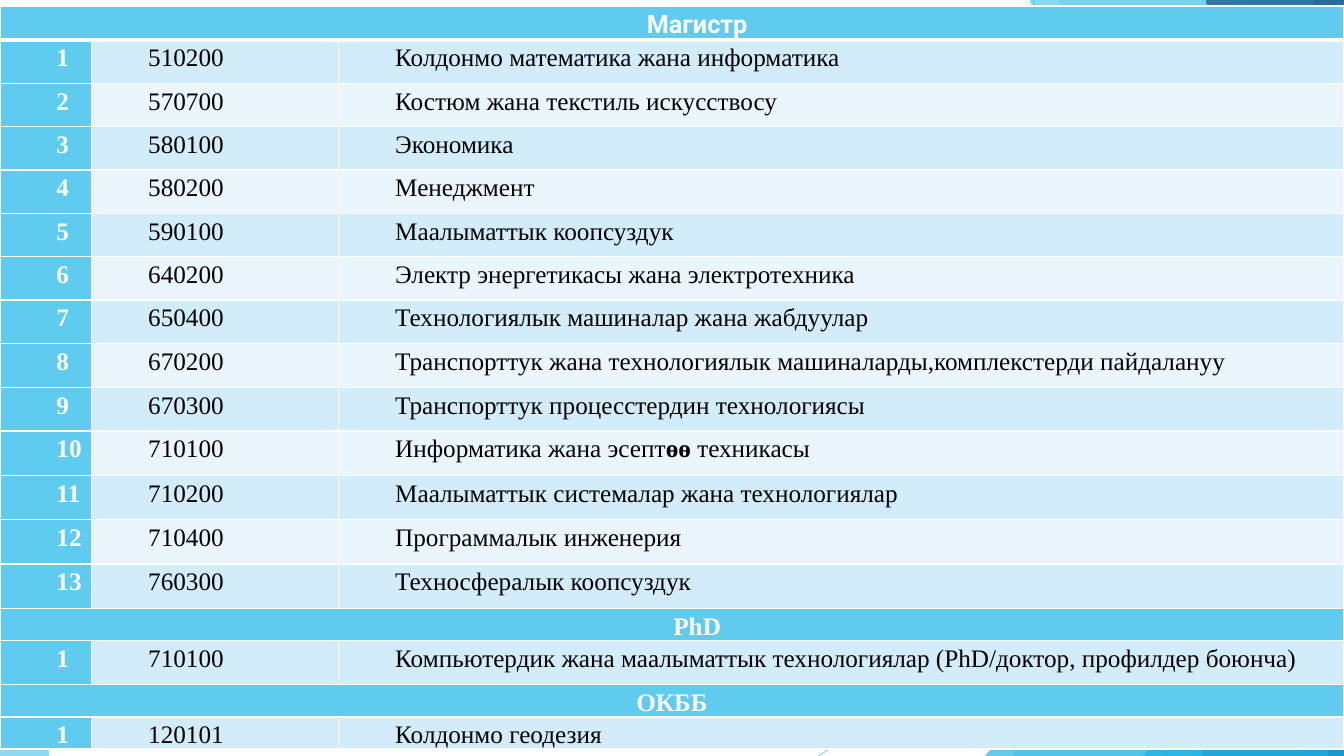
from lxml.etree import SubElement
from pptx import Presentation
from pptx.dml.color import RGBColor
from pptx.enum.shapes import MSO_CONNECTOR as Connector, MSO_SHAPE as Shape
from pptx.enum.text import PP_ALIGN as Align
from pptx.oxml.ns import qn
from pptx.util import Inches, Pt

WHITE = RGBColor(0xFF, 0xFF, 0xFF)
BLACK = RGBColor(0, 0, 0)
SKY = RGBColor(0x5F, 0xCB, 0xEF)
CYAN = RGBColor(0x17, 0xB0, 0xE4)
BLUE = RGBColor(0x2E, 0x83, 0xC3)
NAVY = RGBColor(0x22, 0x62, 0x92)
BANDS = (RGBColor(0xD2, 0xEC, 0xF9), RGBColor(0xEA, 0xF6, 0xFC))

SERIF = "Times New Roman"
TOP, BOTTOM, RIGHT = -0.01, 7.5, 13.33
COLUMNS = (0.91, 2.45, 9.97)
ROW_HEIGHTS = ([0.24] + [0.43] * 7 + [0.44, 0.43] + [0.44] * 4
               + [0.22, 0.44, 0.2, 0.22])

# Level, heading font, heading indent, programmes; ** surrounds bold text
LEVELS = [
    ("Магистр", "Roboto", 0.5, [
        ("510200", "Колдонмо математика жана информатика"),
        ("570700", "Костюм жана текстиль искусствосу"),
        ("580100", "Экономика"),
        ("580200", "Менеджмент"),
        ("590100", "Маалыматтык коопсуздук"),
        ("640200", "Электр энергетикасы жана электротехника"),
        ("650400", "Технологиялык машиналар жана жабдуулар"),
        ("670200", "Транспорттук жана технологиялык машиналарды,"
                   "комплекстерди пайдалануу"),
        ("670300", "Транспорттук процесстердин технологиясы"),
        ("710100", "Информатика жана эсепт**өө** техникасы"),
        ("710200", "Маалыматтык системалар жана технологиялар"),
        ("710400", "Программалык инженерия"),
        ("760300", "Техносфералык коопсуздук"),
    ]),
    ("PhD", SERIF, 0.5, [
        ("710100", "Компьютердик жана маалыматтык технологиялар "
                   "(PhD/доктор, профилдер боюнча)"),
    ]),
    ("ОКББ", SERIF, 0, [("120101", "Колдонмо геодезия")]),
]


def set_alpha(fill, percent):
    color = fill.find(".//" + qn("a:srgbClr"))
    SubElement(color, qn("a:alpha"), val=str(percent * 1000))


def paint(s, color, alpha):
    """Give a shape a translucent fill, without line or shadow."""
    s.shadow.inherit = False
    s.line.fill.background()
    s.fill.solid()
    s.fill.fore_color.rgb = color
    set_alpha(s.element.spPr.find(qn("a:solidFill")), alpha)


def add_ray(shapes, x1, y1, x2, y2):
    s = shapes.add_connector(Connector.STRAIGHT, Inches(x1), Inches(y1),
                             Inches(x2), Inches(y2))
    s.line.color.rgb = SKY
    s.line.width = Pt(0.75)
    set_alpha(s.line._ln, 70)
    SubElement(s.element.spPr, qn("a:effectLst"))


def add_facet(shapes, top_x, bottom_x, color, alpha):
    """Fill the area from a slanted edge to the right side of the slide."""
    builder = shapes.build_freeform(Inches(top_x), Inches(TOP), scale=1.0)
    corners = [(RIGHT, TOP), (RIGHT, BOTTOM), (bottom_x, BOTTOM)]
    builder.add_line_segments([(Inches(x), Inches(y)) for x, y in corners])
    paint(builder.convert_to_shape(), color, alpha)


def add_triangle(shapes, left, top, width, apex, color, alpha):
    s = shapes.add_shape(Shape.ISOSCELES_TRIANGLE, Inches(left), Inches(top),
                         Inches(width), Inches(BOTTOM - top))
    s.adjustments[0] = apex
    paint(s, color, alpha)


def add_background(shapes):
    add_ray(shapes, 10.25, 0, 11.58, BOTTOM)
    add_ray(shapes, RIGHT, 4.03, 8.12, BOTTOM)
    add_facet(shapes, 12.28, 10.04, SKY, 36)
    add_facet(shapes, 10.5, 11.83, SKY, 20)
    add_triangle(shapes, 9.77, 3.33, 3.56, 1, CYAN, 66)
    add_facet(shapes, 10.21, 12.91, CYAN, 50)
    add_facet(shapes, 13.03, 11.92, BLUE, 70)
    add_facet(shapes, 11.96, 13.18, NAVY, 80)
    add_triangle(shapes, 11.34, 3.93, 1.99, 1, CYAN, 66)
    add_triangle(shapes, 0, 4.39, 0.49, 0, SKY, 70)


def write(tf, text, color=BLACK, bold=False, font=SERIF, align=Align.LEFT,
          indent=0.5):
    p = tf.paragraphs[0]
    p.alignment = align
    p.line_spacing = 1.15
    p._p.get_or_add_pPr().set("marL", str(Inches(indent)))
    for i, part in enumerate(text.split("**")):
        r = p.add_run()
        r.text = part
        r.font.name = font
        r.font.size = Pt(18)
        r.font.bold = bold or i % 2 == 1
        r.font.color.rgb = color


def style_cell(cell, fill, bottom=1):
    cell.margin_left = cell.margin_right = Inches(0.06)
    cell.margin_top = cell.margin_bottom = 0
    tc_pr = cell._tc.get_or_add_tcPr()
    for side, width in (("L", 1), ("R", 1), ("T", 1), ("B", bottom)):
        ln = SubElement(tc_pr, qn("a:ln" + side), w=str(Pt(width)))
        SubElement(SubElement(ln, qn("a:solidFill")), qn("a:srgbClr"),
                   val=str(WHITE))
    cell.fill.solid()
    cell.fill.fore_color.rgb = fill


def fill_heading(table, row, title, font, indent):
    for cell in table.rows[row].cells:
        style_cell(cell, SKY, bottom=1 if row else 3)
    head = table.cell(row, 0)
    head.merge(table.cell(row, len(COLUMNS) - 1))
    write(head.text_frame, title, color=WHITE, bold=True, font=font,
          align=Align.CENTER, indent=indent)


def fill_programme(table, row, number, code, name):
    band = BANDS[(number - 1) % 2]
    cells = table.rows[row].cells
    for cell, fill in zip(cells, (SKY, band, band)):
        style_cell(cell, fill)
    number_cell, code_cell, name_cell = cells
    write(number_cell.text_frame, str(number), color=WHITE, bold=True,
          align=Align.JUSTIFY)
    write(code_cell.text_frame, code, align=Align.JUSTIFY)
    write(name_cell.text_frame, name)


def add_programme_table(shapes):
    frame = shapes.add_table(len(ROW_HEIGHTS), len(COLUMNS), 0, Inches(0.06),
                             Inches(RIGHT), Inches(7.44))
    table = frame.table
    for column, width in zip(table.columns, COLUMNS):
        column.width = Inches(width)
    for row, height in zip(table.rows, ROW_HEIGHTS):
        row.height = Inches(height)
    frame.height = Inches(7.44)
    row = 0
    for title, font, indent, programmes in LEVELS:
        fill_heading(table, row, title, font, indent)
        for number, (code, name) in enumerate(programmes, 1):
            fill_programme(table, row + number, number, code, name)
        row += len(programmes) + 1


def main():
    prs = Presentation()
    prs.slide_width = Inches(RIGHT)
    prs.slide_height = Inches(BOTTOM)
    slide = prs.slides.add_slide(prs.slide_layouts[6])
    add_background(slide.shapes)
    add_programme_table(slide.shapes)
    prs.save("out.pptx")


if __name__ == "__main__":
    main()
